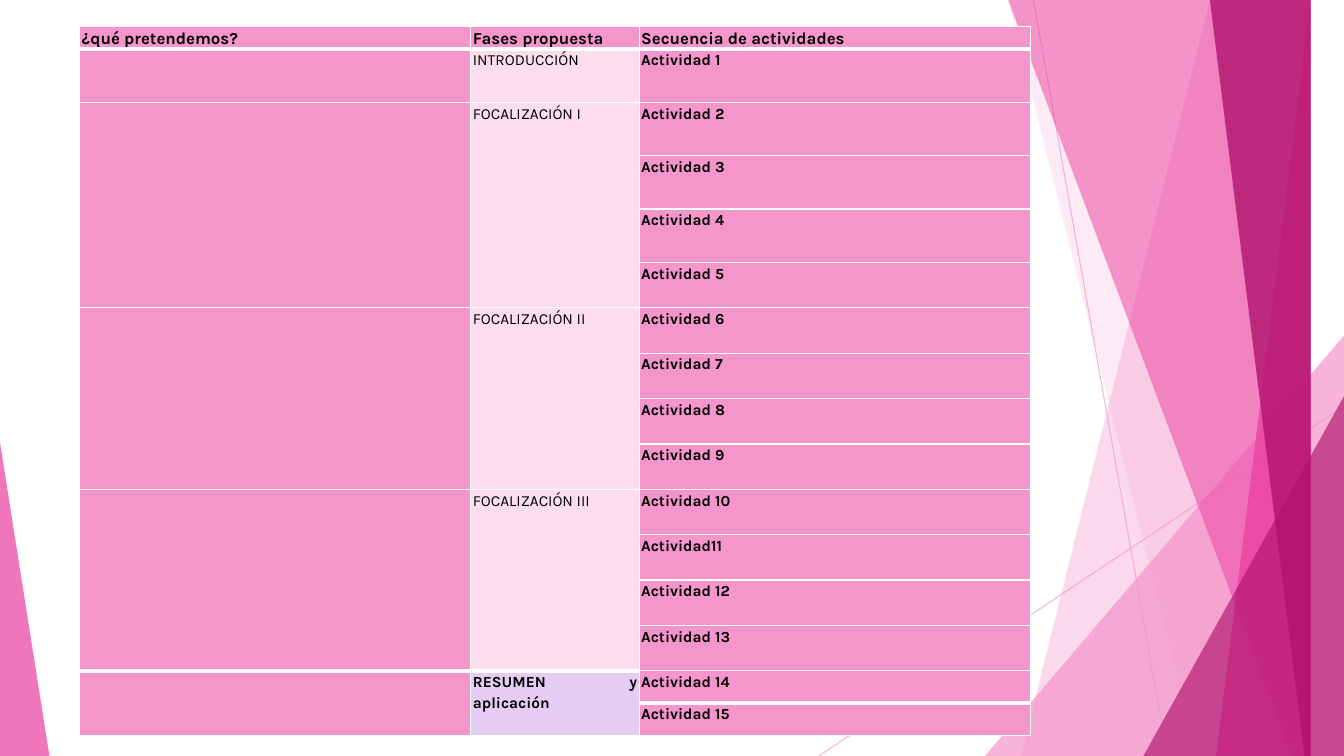
"""Build a slide with a table of teaching phases and activities beside pink facets."""
import lxml.etree
import pptx
import pptx.dml.color
import pptx.enum.shapes
import pptx.enum.text
import pptx.oxml.ns
import pptx.util

Inches, Pt, qn = pptx.util.Inches, pptx.util.Pt, pptx.oxml.ns.qn
WIDTH, HEIGHT = 13.33, 7.5
PINK, PALE, LILAC = "F496CB", "FBDDEC", "E4CCF3"
MAGENTA, DARK, BLACK, WHITE = "EB3D9F", "B2136D", "000000", "FFFFFF"


def paint(fill, color, element=None, opacity=100):
    """Fill with a solid colour, made translucent inside the given element."""
    fill.solid()
    fill.fore_color.rgb = pptx.dml.color.RGBColor.from_string(color)
    if opacity < 100:
        for node in element.iter(qn("a:srgbClr")):
            lxml.etree.SubElement(node, qn("a:alpha"), val=str(opacity * 1000))


def add_border(cell, side, points):
    """Draw one white edge of a table cell."""
    properties = cell._tc.get_or_add_tcPr()
    line = lxml.etree.SubElement(properties, qn(f"a:ln{side}"), w=str(Pt(points)))
    solid = lxml.etree.SubElement(line, qn("a:solidFill"))
    lxml.etree.SubElement(solid, qn("a:srgbClr"), val=WHITE)


presentation = pptx.Presentation()
presentation.slide_width, presentation.slide_height = Inches(WIDTH), Inches(HEIGHT)
slide = presentation.slides.add_slide(presentation.slide_layouts[6])

for start_x, start_y, end_x in [(10.25, 0, 11.58), (WIDTH, 4.03, 8.12)]:
    connector = slide.shapes.add_connector(
        pptx.enum.shapes.MSO_CONNECTOR.STRAIGHT,
        Inches(start_x), Inches(start_y), Inches(end_x), Inches(HEIGHT))
    connector.line.width = Pt(0.75)
    paint(connector.line.fill, PINK, connector.element, 70)
    lxml.etree.SubElement(connector.element.spPr, qn("a:effectLst"))

# Bands give their top and bottom left corners; triangles left, width, height, apex.
facets = [
    ("band", (12.28, 10.04), PINK, 36),
    ("band", (10.5, 11.83), PINK, 20),
    ("triangle", (9.77, 3.56, 4.17, 1), PINK, 72),
    ("band", (10.21, 12.91), MAGENTA, 50),
    ("band", (13.03, 11.92), MAGENTA, 70),
    ("band", (11.96, 13.18), DARK, 80),
    ("triangle", (11.34, 1.99, 3.57, 1), DARK, 66),
    ("triangle", (0, 0.49, 3.11, 0), MAGENTA, 70),
]
for kind, geometry, color, opacity in facets:
    if kind == "band":
        top_x, bottom_x = geometry
        builder = slide.shapes.build_freeform(top_x, 0, scale=Inches(1))
        builder.add_line_segments([(WIDTH, 0), (WIDTH, HEIGHT), (bottom_x, HEIGHT)])
        shape = builder.convert_to_shape()
    else:
        left, width, height, apex = geometry
        shape = slide.shapes.add_shape(
            pptx.enum.shapes.MSO_SHAPE.ISOSCELES_TRIANGLE,
            Inches(left), Inches(HEIGHT - height), Inches(width), Inches(height))
        shape.adjustments[0] = apex
    shape.shadow.inherit = False
    paint(shape.fill, color, shape.element.spPr, opacity)
    shape.line.fill.background()

headings = ["¿qué pretendemos?", "Fases propuesta", "Secuencia de actividades"]
phases = [
    ("INTRODUCCIÓN", 1, PALE),
    ("FOCALIZACIÓN I", 4, PALE),
    ("FOCALIZACIÓN II", 4, PALE),
    ("FOCALIZACIÓN III", 4, PALE),
    ("RESUMEN y aplicación", 2, LILAC),
]
column_widths = [3.88, 1.67, 3.88]
row_heights = [0.22] + [0.53] * 4 + [0.45] * 9 + [0.32] * 2
thick_tops = {(1, 0), (1, 1), (1, 2), (14, 0), (14, 1), (15, 2)}

table = slide.shapes.add_table(
    len(row_heights), len(column_widths), Inches(0.79), Inches(0.26),
    Inches(sum(column_widths)), Inches(sum(row_heights))).table
table.first_row = table.horz_banding = False
for column, width in zip(table.columns, column_widths):
    column.width = Inches(width)
for row, height in zip(table.rows, row_heights):
    row.height = Inches(height)

texts = {(0, column): heading for column, heading in enumerate(headings)}
for number in range(1, len(row_heights)):
    texts[number, 2] = "Actividad11" if number == 11 else f"Actividad {number}"
phase_fills = {}
first = 1
for phase, count, color in phases:
    texts[first, 1] = phase
    phase_fills[first] = color
    if count > 1:
        for column in range(2):
            table.cell(first, column).merge(table.cell(first + count - 1, column))
    first += count

for row in range(len(row_heights)):
    for column in range(len(column_widths)):
        cell = table.cell(row, column)
        cell.margin_left = cell.margin_right = Inches(0.02)
        cell.margin_top = cell.margin_bottom = 0
        fill_color = phase_fills.get(row, PINK) if column == 1 else PINK
        add_border(cell, "L", 1)
        add_border(cell, "R", 1)
        add_border(cell, "T", 3 if (row, column) in thick_tops else 1)
        add_border(cell, "B", 3 if (row + 1, column) in thick_tops else 1)
        paint(cell.fill, fill_color)
        paragraph = cell.text_frame.paragraphs[0]
        paragraph.text = texts.get((row, column), "")
        paragraph.alignment = pptx.enum.text.PP_ALIGN.JUSTIFY
        paragraph.line_spacing = 1.15
        paragraph.space_after = Pt(10)
        paragraph.font.name = "Karla"
        paragraph.font.size = Pt(12 if row == 0 else 11)
        paragraph.font.bold = fill_color != PALE
        paint(paragraph.font.fill, BLACK)

presentation.save("out.pptx")
